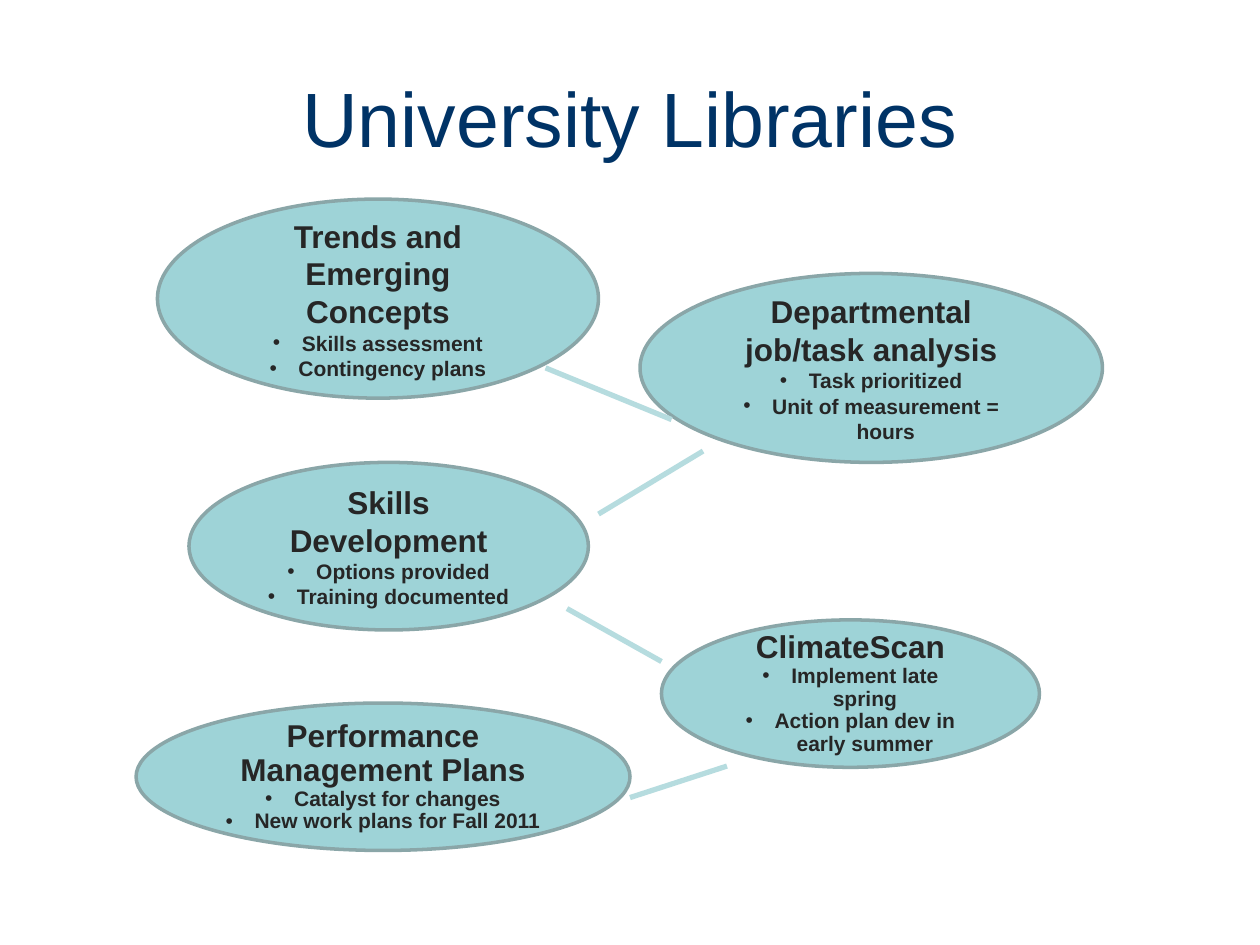
from dataclasses import dataclass

from lxml import etree
from pptx import Presentation
from pptx.dml.color import RGBColor
from pptx.enum.shapes import MSO_CONNECTOR, MSO_SHAPE
from pptx.enum.text import MSO_ANCHOR, PP_ALIGN
from pptx.oxml.ns import qn
from pptx.util import Inches, Pt

OVAL = MSO_SHAPE.OVAL
STRAIGHT = MSO_CONNECTOR.STRAIGHT
MIDDLE = MSO_ANCHOR.MIDDLE
CENTER = PP_ALIGN.CENTER
TITLE_ONLY = 5


@dataclass(frozen=True)
class Theme:
    """Colours, font and sizes shared by the slide."""
    font: str = "Arial"
    title_color: str = "003366"
    text_color: str = "262626"
    fill: str = "9ED3D7"
    outline: str = "8AA6A8"
    connector: str = "B6DCDF"
    title_size: int = 44
    heading_size: int = 18
    bullet_size: int = 12
    outline_width: int = 2
    connector_width: int = 3
    normal_spacing: float = 1.0
    tight_spacing: float = 0.9
    low_height: float = 1.2
    bullet_indent: float = 0.23


THEME = Theme()

TOPICS = [
    ((1.25, 1.58, 3.5, 1.58), "Trends and Emerging Concepts",
     ["Skills assessment", "Contingency plans"]),
    ((5.08, 2.17, 3.67, 1.5), "Departmental job/task analysis",
     ["Task prioritized", "Unit of measurement = hours"]),
    ((1.5, 3.67, 3.17, 1.33), "Skills Development",
     ["Options provided", "Training documented"]),
    ((5.25, 4.92, 3, 1.17), "ClimateScan",
     ["Implement late spring", "Action plan dev in early summer"]),
    ((1.08, 5.58, 3.92, 1.17), "Performance Management Plans",
     ["Catalyst for changes", "New work plans for Fall 2011"]),
]

LINKS = [
    (4.33, 2.92, 5.33, 3.33),
    (5.58, 3.58, 4.75, 4.08),
    (4.5, 4.83, 5.25, 5.25),
    (5.77, 6.08, 5, 6.33),
]


def add_bullet(paragraph):
    """Give a paragraph a round bullet with a hanging indent."""
    properties = paragraph._p.get_or_add_pPr()
    indent = Inches(THEME.bullet_indent)
    properties.set("marL", str(indent))
    properties.set("indent", str(-indent))
    etree.SubElement(properties, qn("a:buFont")).set("typeface", THEME.font)
    etree.SubElement(properties, qn("a:buChar")).set("char", "•")


def write_text(paragraph, text, *, size, color, bold=False, bullet=False,
               spacing=THEME.normal_spacing):
    """Write one centred paragraph in the given format."""
    paragraph.text = text
    paragraph.alignment = CENTER
    if bullet:
        add_bullet(paragraph)
    paragraph.line_spacing = spacing
    font = paragraph.runs[0].font
    font.name = THEME.font
    font.size = Pt(size)
    font.bold = bold
    font.color.rgb = RGBColor.from_string(color)


def add_title(slide, text):
    """Place and format the slide title."""
    title = slide.shapes.title
    title.left, title.top = Inches(0.5), Inches(0.3)
    title.width, title.height = Inches(9), Inches(1.25)
    title.text_frame.vertical_anchor = MIDDLE
    write_text(title.text_frame.paragraphs[0], text,
               size=THEME.title_size, color=THEME.title_color)


def add_topic(slide, box, heading, bullets):
    """Draw an ellipse with a heading and its bullets, set tighter if it is low."""
    shape = slide.shapes.add_shape(OVAL, *map(Inches, box))
    shape.shadow.inherit = False
    shape.fill.solid()
    shape.fill.fore_color.rgb = RGBColor.from_string(THEME.fill)
    shape.line.color.rgb = RGBColor.from_string(THEME.outline)
    shape.line.width = Pt(THEME.outline_width)
    frame = shape.text_frame
    frame.word_wrap = True
    frame.vertical_anchor = MIDDLE
    is_low = box[3] < THEME.low_height
    spacing = THEME.tight_spacing if is_low else THEME.normal_spacing
    write_text(frame.paragraphs[0], heading, size=THEME.heading_size,
               color=THEME.text_color, bold=True, spacing=spacing)
    for bullet in bullets:
        write_text(frame.add_paragraph(), bullet, size=THEME.bullet_size,
                   color=THEME.text_color, bold=True, bullet=True,
                   spacing=spacing)


def add_link(slide, ends):
    """Draw a straight line between two topics."""
    connector = slide.shapes.add_connector(STRAIGHT, *map(Inches, ends))
    connector.line.color.rgb = RGBColor.from_string(THEME.connector)
    connector.line.width = Pt(THEME.connector_width)
    etree.SubElement(connector._element.spPr, qn("a:effectLst"))


def main():
    """Build the slide and save it."""
    presentation = Presentation()
    presentation.slide_width = Inches(10)
    presentation.slide_height = Inches(7.5)
    slide = presentation.slides.add_slide(presentation.slide_layouts[TITLE_ONLY])
    add_title(slide, "University Libraries")
    for box, heading, bullets in TOPICS:
        add_topic(slide, box, heading, bullets)
    for ends in LINKS:
        add_link(slide, ends)
    presentation.save("out.pptx")


if __name__ == "__main__":
    main()
